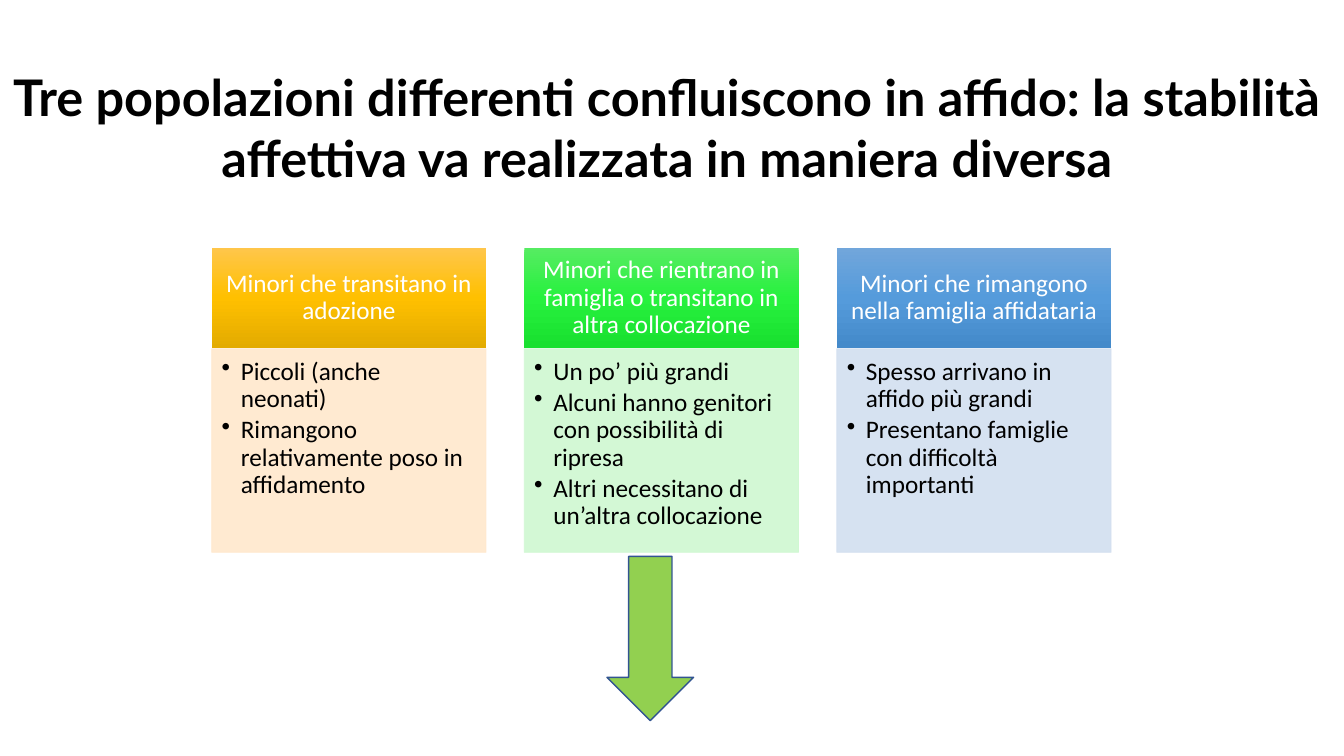
"""Build the slide on the three groups of children in foster care."""
import copy
from dataclasses import dataclass
from typing import Any

import lxml.etree
import pptx
import pptx.dml.color
import pptx.enum.shapes
import pptx.enum.text
import pptx.oxml.ns
import pptx.util

PX = 9144
COLORS = {"text": "000000", "header": "FFFFFF", "arrow": "92D050", "edge": "325491"}
SHAPE = pptx.enum.shapes.MSO_SHAPE
ALIGN = pptx.enum.text.PP_ALIGN
ANCHOR = pptx.enum.text.MSO_ANCHOR
qn = pptx.oxml.ns.qn

LEFT, STEP, WIDTH = 210, 310, 272
HEAD_TOP, HEAD_H, BODY_TOP, BODY_H = 246, 99, 346, 202
INDENT = 19


@dataclass(frozen=True)
class Column:
    heading: str
    points: tuple[str, ...]
    gradient: tuple[str, str, str]
    tint: str


COLUMNS = (
    Column("Minori che transitano in adozione",
           ("Piccoli (anche neonati)", "Rimangono relativamente poso in affidamento"),
           ("FFC64B", "FFC000", "E3AB00"), "FFE8CC"),
    Column("Minori che rientrano in famiglia o transitano in altra collocazione",
           ("Un po’ più grandi", "Alcuni hanno genitori con possibilità di ripresa",
            "Altri necessitano di un’altra collocazione"),
           ("56EC62", "27F13E", "18E02F"), "CFF8D1"),
    Column("Minori che rimangono nella famiglia affidataria",
           ("Spesso arrivano in affido più grandi",
            "Presentano famiglie con difficoltà importanti"),
           ("71A6DB", "559BDB", "448ACA"), "D2DFF0"),
)


def px(n: int) -> int:
    return n * PX


def rgb(value: str) -> pptx.dml.color.RGBColor:
    return pptx.dml.color.RGBColor.from_string(value)


def apply(obj: Any, values: dict[str, Any]) -> None:
    for name, value in values.items():
        setattr(obj, name, value)


def frame(sp: Any, insets: tuple[int, int, int, int], anchor: Any) -> Any:
    tf = sp.text_frame
    sides = ("margin_left", "margin_top", "margin_right", "margin_bottom")
    apply(tf, {"word_wrap": True, "vertical_anchor": anchor,
               **{side: px(n) for side, n in zip(sides, insets)}})
    return tf


def write(p: Any, text: str, size: int, font: str, color: str,
          bold: bool = False, **layout: Any) -> None:
    apply(p, layout)
    r = p.add_run()
    r.text = text
    apply(r.font, {"size": pptx.util.Pt(size), "name": font, "bold": bold})
    r.font.color.rgb = rgb(color)


def add_box(s: Any, kind: Any, x: int, y: int, w: int, h: int) -> Any:
    sp = s.shapes.add_shape(kind, px(x), px(y), px(w), px(h))
    sp.shadow.inherit = False
    return sp


def fill_gradient(sp: Any, colors: tuple[str, str, str]) -> None:
    sp.fill.gradient()
    sp.fill.gradient_angle = 270
    stops = sp._element.spPr.find(f".//{qn('a:gsLst')}")
    stops.append(copy.deepcopy(stops[-1]))
    for stop, position, color in zip(sp.fill.gradient_stops, (0, 0.5, 1), colors):
        stop.position = position
        stop.color.rgb = rgb(color)


def add_header(s: Any, x: int, column: Column) -> None:
    sp = add_box(s, SHAPE.RECTANGLE, x, HEAD_TOP, WIDTH, HEAD_H)
    fill_gradient(sp, column.gradient)
    sp.line.fill.background()
    tf = frame(sp, (14, 8, 14, 8), ANCHOR.MIDDLE)
    write(tf.paragraphs[0], column.heading, 18, "Calibri", COLORS["header"],
          alignment=ALIGN.CENTER, line_spacing=0.9)


def add_body(s: Any, x: int, column: Column) -> None:
    sp = add_box(s, SHAPE.RECTANGLE, x, BODY_TOP, WIDTH, BODY_H)
    sp.fill.solid()
    sp.fill.fore_color.rgb = sp.line.color.rgb = rgb(column.tint)
    sp.line.width = pptx.util.Pt(0.5)
    for clr in sp._element.spPr.iter(qn("a:srgbClr")):
        lxml.etree.SubElement(clr, qn("a:alpha"), val="90000")
    tf = frame(sp, (10, 10, 14, 16), ANCHOR.TOP)
    for i, point in enumerate(column.points):
        p = tf.add_paragraph() if i else tf.paragraphs[0]
        pPr = p._p.get_or_add_pPr()
        pPr.set("marL", str(px(INDENT)))
        pPr.set("indent", str(px(-INDENT)))
        lxml.etree.SubElement(pPr, qn("a:buChar"), char="•")
        write(p, point, 18, "Calibri", COLORS["text"], alignment=ALIGN.LEFT,
              line_spacing=0.9, space_after=pptx.util.Pt(2.7))


def add_title(s: Any) -> None:
    sp = s.shapes.add_textbox(px(-10), px(61), px(1343), px(131))
    tf = frame(sp, (10, 5, 10, 5), ANCHOR.TOP)
    write(tf.paragraphs[0],
          "Tre popolazioni differenti confluiscono in affido: "
          "la stabilità affettiva va realizzata in maniera diversa",
          36, "Lato", COLORS["text"], bold=True, alignment=ALIGN.CENTER)


def add_arrow(s: Any) -> None:
    sp = add_box(s, SHAPE.DOWN_ARROW, 602, 552, 86, 163)
    sp.fill.solid()
    sp.fill.fore_color.rgb = rgb(COLORS["arrow"])
    sp.line.color.rgb = rgb(COLORS["edge"])
    sp.line.width = pptx.util.Pt(1)


def main() -> None:
    prs = pptx.Presentation()
    apply(prs, {"slide_width": px(1333), "slide_height": px(750)})
    s = prs.slides.add_slide(prs.slide_layouts[6])
    add_title(s)
    for i, column in enumerate(COLUMNS):
        x = LEFT + i * STEP
        add_header(s, x, column)
        add_body(s, x, column)
    add_arrow(s)
    prs.save("out.pptx")


if __name__ == "__main__":
    main()
